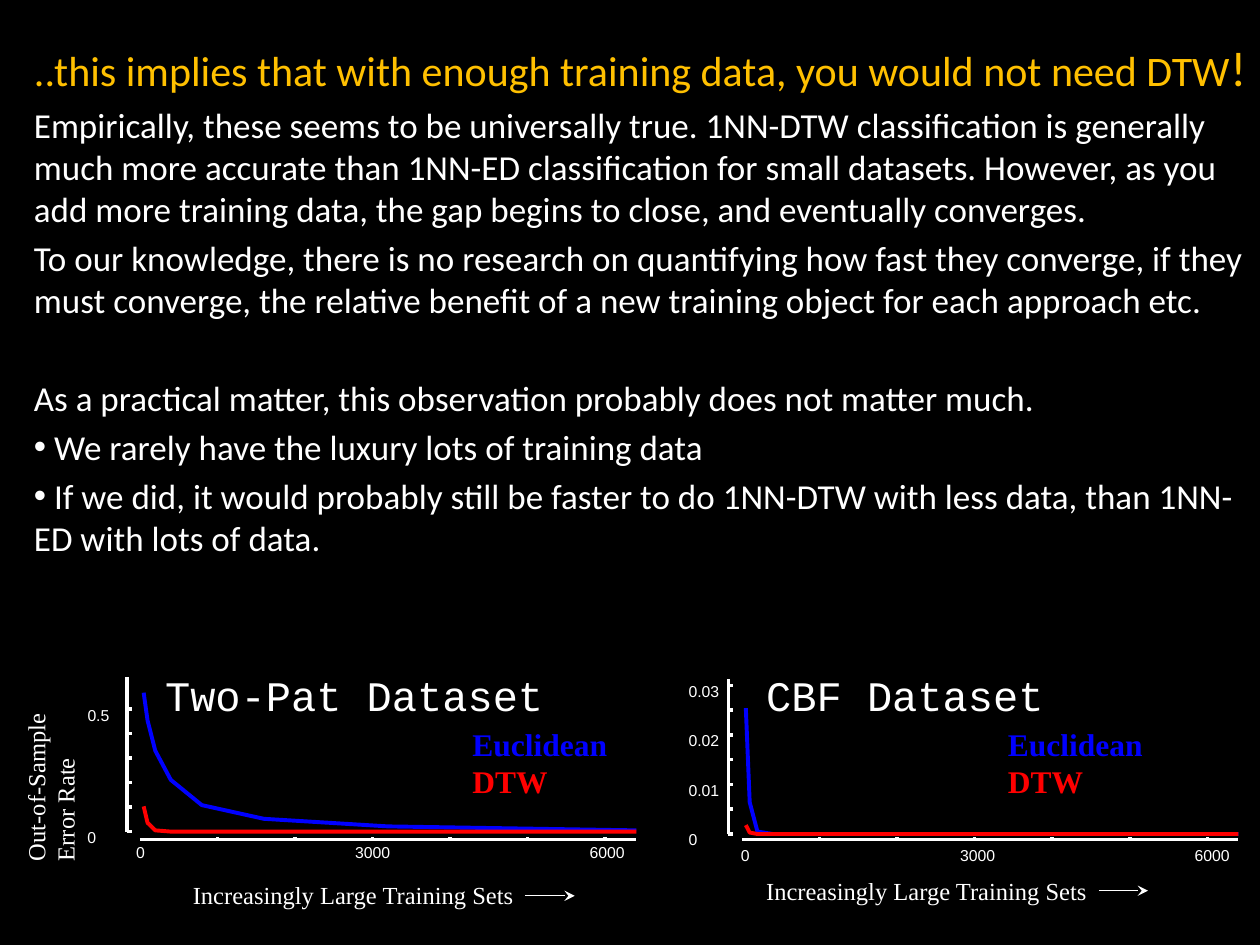
from dataclasses import dataclass

import pptx
import pptx.dml.color
import pptx.enum.shapes
import pptx.enum.text
import pptx.oxml.ns
import pptx.util
from lxml import etree

Pt = pptx.util.Pt
RGBColor = pptx.dml.color.RGBColor
AutoSize = pptx.enum.text.MSO_AUTO_SIZE
qn = pptx.oxml.ns.qn

BLACK = RGBColor(0x00, 0x00, 0x00)
WHITE = RGBColor(0xFF, 0xFF, 0xFF)
GOLD = RGBColor(0xFF, 0xC0, 0x00)
BLUE = RGBColor(0x00, 0x00, 0xFF)
RED = RGBColor(0xFF, 0x00, 0x00)

TRAINING_SIZES = [50, 100, 200, 400, 800, 1600, 3200, 6400]
PT_PER_OBJECT = 283.7 / 6400
X_AXIS_Y = 479.6


@dataclass
class Run:
    text: str
    size: float
    font: str
    color: RGBColor = WHITE
    bold: bool = False


@dataclass
class Panel:
    """One error plot; errors are in percent, lengths in points."""
    title: str
    title_left: float
    title_width: float
    axis_x: float
    axis_top: float
    zero_y: float
    origin_x: float
    tick_gap: float
    tick_step: float
    tick_count: int
    y_labels: dict[float, str]
    x_label_top: float
    x_label_shift: float
    legend_left: float
    caption_left: float
    caption_top: float
    arrow_drop: float
    euclidean: list[float]
    dtw: list[float]


@dataclass
class XLabel:
    size: int
    offset: float
    width: float


X_LABELS = [XLabel(0, -2.1, 11.5), XLabel(3000, -9.9, 44.6), XLabel(6000, -8.9, 29.5)]

PANELS = [
    Panel("Two-Pat Dataset", 94.3, 270, 72.7, 386.6, 475.2, 79.9, 14, 10, 6,
          {0: "0", 50: "0.5"}, 481.7, 0, 270, 110.2, 502.6, 9.3,
          [56.7, 45.4, 33, 21.1, 10.8, 5.2, 2.1, 0.5],
          [10.3, 3.6, 0.5, 0, 0, 0, 0, 0]),
    Panel("CBF Dataset", 437.8, 198, 416.2, 388.1, 476.6, 424, 14.16, 0.5, 7,
          {0: "0", 1: "0.01", 2: "0.02", 3: "0.03"}, 483.1, 1.5, 576, 437.8, 500.4, 8.6,
          [2.54, 0.64, 0.05, 0, 0, 0, 0, 0],
          [0.18, 0.03, 0, 0, 0, 0, 0, 0]),
]

BODY = [
    ("Empirically, these seems to be universally true. 1NN-DTW classification is generally "
     "much more accurate than 1NN-ED classification for small datasets. However, as you add "
     "more training data, the gap begins to close, and eventually converges.", False),
    ("To our knowledge, there is no research on quantifying how fast they converge, if they "
     "must converge, the relative benefit of a new training object for each approach etc.", False),
    ("As a practical matter, this observation probably does not matter much.", False),
    (" We rarely have the luxury lots of training data", True),
    (" If we did, it would probably still be faster to do 1NN-DTW with less data, "
     "than 1NN-ED with lots of data.", True),
]
SECTION_START = 2


def add_run(p, run: Run) -> None:
    r = p.add_run()
    r.text = run.text
    r.font.size = Pt(run.size)
    r.font.name = run.font
    r.font.bold = run.bold
    r.font.color.rgb = run.color


def set_bullet(p, bulleted: bool) -> None:
    pPr = p._p.get_or_add_pPr()
    pPr.set("marL", "0")
    pPr.set("indent", "0")
    if bulleted:
        etree.SubElement(pPr, qn("a:buFont")).set("typeface", "Arial")
        etree.SubElement(pPr, qn("a:buChar")).set("char", "•")
    else:
        etree.SubElement(pPr, qn("a:buNone"))


def add_text(s, left: float, top: float, width: float, height: float,
             runs: list[Run], wrap: bool = True):
    """Add a text box without insets, one paragraph per run."""
    sp = s.shapes.add_textbox(Pt(left), Pt(top), Pt(width), Pt(height))
    tf = sp.text_frame
    tf.margin_left = tf.margin_top = tf.margin_right = tf.margin_bottom = 0
    tf.word_wrap = wrap
    tf.auto_size = AutoSize.SHAPE_TO_FIT_TEXT
    for i, run in enumerate(runs):
        add_run(tf.add_paragraph() if i else tf.paragraphs[0], run)
    return sp


def add_line(s, x1: float, y1: float, x2: float, y2: float,
             width: float = 0, arrow: bool = False) -> None:
    sp = s.shapes.add_connector(pptx.enum.shapes.MSO_CONNECTOR.STRAIGHT,
                                Pt(x1), Pt(y1), Pt(x2), Pt(y2))
    sp.line.color.rgb = WHITE
    sp.line.width = Pt(width)
    if arrow:
        etree.SubElement(sp.line._get_or_add_ln(), qn("a:tailEnd")).set("type", "stealth")
    etree.SubElement(sp._element.spPr, qn("a:effectLst"))


def add_curve(s, panel: Panel, errors: list[float], color: RGBColor) -> None:
    points = [(Pt(panel.origin_x + size * PT_PER_OBJECT),
               Pt(panel.zero_y - error / panel.tick_step * panel.tick_gap))
              for size, error in zip(TRAINING_SIZES, errors)]
    builder = s.shapes.build_freeform(*points[0])
    builder.add_line_segments(points[1:], close=False)
    sp = builder.convert_to_shape()
    sp.fill.background()
    sp.line.color.rgb = color
    sp.line.width = Pt(2.25)
    sp.shadow.inherit = False


def add_panel(s, panel: Panel) -> None:
    add_line(s, panel.axis_x, panel.zero_y, panel.axis_x, panel.axis_top)
    for i in range(panel.tick_count):
        y = panel.zero_y - i * panel.tick_gap
        add_line(s, panel.axis_x, y, panel.axis_x + 2.9, y)
    for error, label in panel.y_labels.items():
        y = panel.zero_y - error / panel.tick_step * panel.tick_gap
        add_text(s, panel.axis_x - 22.7, y - 2.2, 5 * len(label), 10.8,
                 [Run(label, 9, "Arial")], wrap=False)

    add_line(s, panel.origin_x, X_AXIS_Y, panel.origin_x + 6400 * PT_PER_OBJECT, X_AXIS_Y)
    for size in range(1000, 6001, 1000):
        x = panel.origin_x + size * PT_PER_OBJECT
        add_line(s, x, X_AXIS_Y, x, X_AXIS_Y - 1.4)
    for label in X_LABELS:
        x = panel.origin_x + label.size * PT_PER_OBJECT + label.offset + panel.x_label_shift
        add_text(s, x, panel.x_label_top, label.width, 10.8, [Run(str(label.size), 9, "Arial")])

    add_curve(s, panel, panel.euclidean, BLUE)
    add_curve(s, panel, panel.dtw, RED)
    add_text(s, panel.title_left, 382.3, panel.title_width, 28.8,
             [Run(panel.title, 24, "Courier New")])
    add_text(s, panel.legend_left, 414, 113, 43.9,
             [Run("Euclidean", 18, "Times New Roman", BLUE, True),
              Run("DTW", 18, "Times New Roman", RED, True)])
    add_text(s, panel.caption_left, panel.caption_top, 189.4, 17.3,
             [Run("Increasingly Large Training Sets", 14, "Times New Roman")])
    arrow_x, arrow_y = panel.caption_left + 190.1, panel.caption_top + panel.arrow_drop
    add_line(s, arrow_x, arrow_y, arrow_x + 28.1, arrow_y, 0.75, arrow=True)


def fill_body(sp) -> None:
    sp.left, sp.top, sp.width, sp.height = Pt(12.2), Pt(18), Pt(707.8), Pt(318.2)
    tf = sp.text_frame
    tf.auto_size = AutoSize.NONE
    p = tf.paragraphs[0]
    set_bullet(p, False)
    add_run(p, Run("..this implies that with enough training data, you would not need DTW",
                   24, "Calibri", GOLD))
    add_run(p, Run("!", 28, "Calibri", GOLD))
    for i, (text, bulleted) in enumerate(BODY):
        p = tf.add_paragraph()
        if i == SECTION_START:
            p.space_before = Pt(32)
        set_bullet(p, bulleted)
        add_run(p, Run(text, 20, "Calibri"))


def main() -> None:
    prs = pptx.Presentation()
    prs.slide_width, prs.slide_height = Pt(720), Pt(540)
    s = prs.slides.add_slide(prs.slide_layouts[1])
    s.background.fill.solid()
    s.background.fill.fore_color.rgb = BLACK
    title = s.shapes.title._element
    title.getparent().remove(title)
    fill_body(s.placeholders[1])
    for panel in PANELS:
        add_panel(s, panel)
    sp = add_text(s, -25.2, 421.2, 108, 33.8,
                  [Run("Out-of-Sample Error Rate", 14, "Times New Roman")])
    sp.rotation = 270
    prs.save("out.pptx")


if __name__ == "__main__":
    main()
